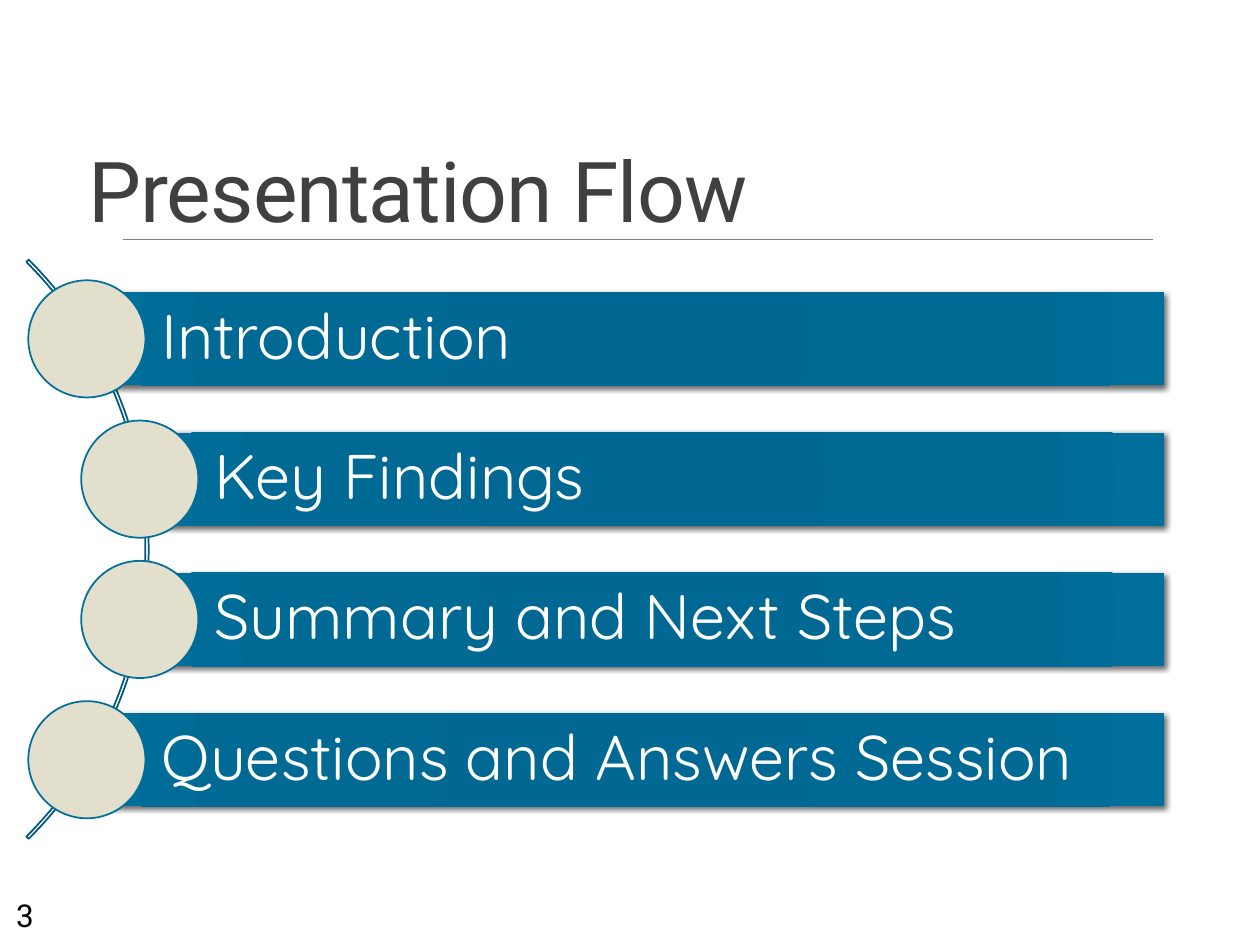
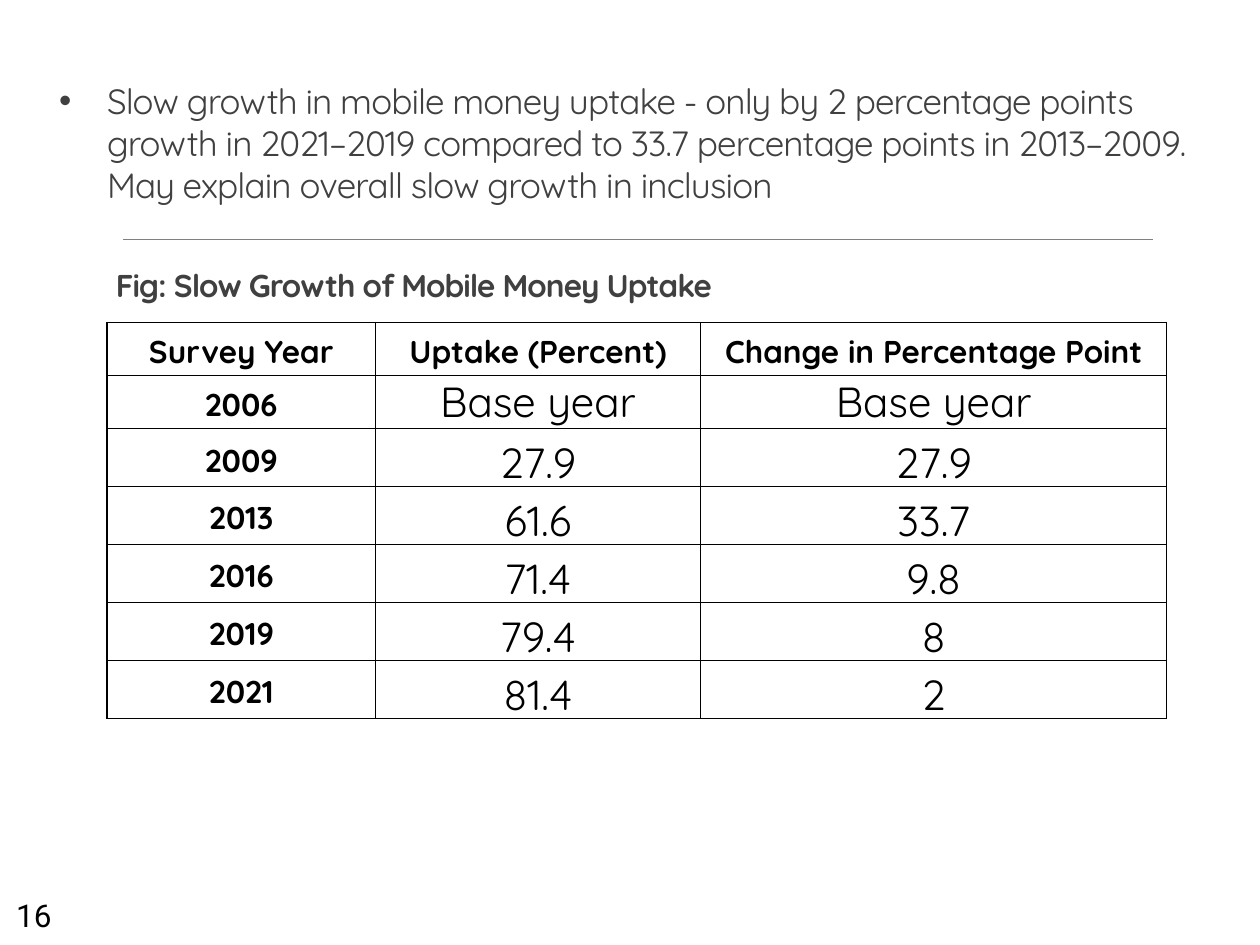
"""Build two slides: the presentation flow and the mobile money uptake table."""
import pptx
import pptx.dml.color
import pptx.enum.shapes
import pptx.enum.text
import pptx.oxml
import pptx.oxml.ns
import pptx.util
from lxml import etree

Inches = pptx.util.Inches
Pt = pptx.util.Pt
RGBColor = pptx.dml.color.RGBColor
Shape = pptx.enum.shapes.MSO_SHAPE
Align = pptx.enum.text.PP_ALIGN
Anchor = pptx.enum.text.MSO_ANCHOR
qn = pptx.oxml.ns.qn

INK = RGBColor(0x40, 0x40, 0x40)
BLACK = RGBColor(0, 0, 0)
WHITE = RGBColor(0xFF, 0xFF, 0xFF)
RULE_GRAY = RGBColor(0x80, 0x80, 0x80)
ARC_BLUE = RGBColor(0x00, 0x59, 0x7C)
RING_BLUE = RGBColor(0x00, 0x6F, 0x9B)
SAND = RGBColor(0xE2, 0xDF, 0xCC)
BAR_STOPS = ((0, "006790"), (34, "006892"), (70, "006A94"), (100, "006F9B"))
HEADING_FONT = "Roboto"
BODY_FONT = "Quicksand"
SNUG = (0.07, 0.04, 0.07, 0.04)
DRAWING_NS = 'xmlns:a="http://schemas.openxmlformats.org/drawingml/2006/main"'

FLOW_STEPS = (
    (0.69, "Introduction"),
    (1.11, "Key Findings"),
    (1.11, "Summary and Next Steps"),
    (0.69, "Questions and Answers Session"),
)
BAR_RIGHT, BAR_HEIGHT, CIRCLE_SIZE = 9.24, 0.74, 0.93
FIRST_BAR_TOP, LAST_BAR_TOP = 2.32, 5.66

UPTAKE_ROWS = (
    ("Survey Year", "Uptake (Percent)", "Change in Percentage Point"),
    ("2006", "Base year", "Base year"),
    ("2009", "27.9", "27.9"),
    ("2013", "61.6", "33.7"),
    ("2016", "71.4", "9.8"),
    ("2019", "79.4", "8"),
    ("2021", "81.4", "2"),
)
COLUMN_WIDTHS = (2.13, 2.58, 3.7)
ROW_HEIGHT = 0.42


def write_text(frame, text, *, size, font=BODY_FONT, color=INK, bold=False,
               align=Align.LEFT, line_spacing=None, tracking=None, hanging=None):
    """Write one formatted paragraph, bulleted when a hanging indent is given."""
    paragraph = frame.paragraphs[0]
    paragraph.alignment = align
    if line_spacing:
        paragraph.line_spacing = line_spacing
    if hanging:
        properties = paragraph._p.get_or_add_pPr()
        properties.set("marL", str(Inches(hanging)))
        properties.set("indent", str(-Inches(hanging)))
        etree.SubElement(properties, qn("a:buFont")).set("typeface", "Arial")
        etree.SubElement(properties, qn("a:buChar")).set("char", "•")
    run = paragraph.add_run()
    run.text = text
    run.font.name = font
    run.font.size = Pt(size)
    run.font.bold = bold
    run.font.color.rgb = color
    if tracking:
        run.font._element.set("spc", str(round(tracking * 100)))


def set_frame(frame, anchor, insets):
    """Wrap a text frame and set its anchor and insets in inches."""
    frame.word_wrap = True
    frame.vertical_anchor = anchor
    (frame.margin_left, frame.margin_top,
     frame.margin_right, frame.margin_bottom) = map(Inches, insets)


def add_text(slide, box, text, *, anchor=Anchor.TOP,
             insets=(0.1, 0.05, 0.1, 0.05), **text_format):
    """Add a text box."""
    frame = slide.shapes.add_textbox(*map(Inches, box)).text_frame
    set_frame(frame, anchor, insets)
    write_text(frame, text, **text_format)


def add_outlined(slide, preset, box, line_color, fill_color=None):
    """Add a preset shape with a thin outline and an optional fill."""
    shape = slide.shapes.add_shape(preset, *map(Inches, box))
    shape.shadow.inherit = False
    shape.line.color.rgb = line_color
    shape.line.width = Pt(1)
    if fill_color is None:
        shape.fill.background()
    else:
        shape.fill.solid()
        shape.fill.fore_color.rgb = fill_color
    return shape


def add_flow_bar(slide, box, label):
    """Add a radial gradient bar with a soft shadow and its label."""
    bar = slide.shapes.add_shape(Shape.RECTANGLE, *map(Inches, box))
    bar.line.fill.background()
    stops = "".join(f'<a:gs pos="{position * 1000}"><a:srgbClr val="{color}"/></a:gs>'
                    for position, color in BAR_STOPS)
    gradient = pptx.oxml.parse_xml(
        f'<a:gradFill {DRAWING_NS} rotWithShape="1"><a:gsLst>{stops}</a:gsLst>'
        '<a:path path="circle"><a:fillToRect l="100000" t="100000" r="100000" '
        'b="100000"/></a:path></a:gradFill>')
    shadow = pptx.oxml.parse_xml(
        f'<a:effectLst {DRAWING_NS}><a:outerShdw blurRad="{Pt(3)}" dist="{Pt(2)}" '
        'dir="2700000" rotWithShape="0"><a:srgbClr val="000000">'
        '<a:alpha val="60000"/></a:srgbClr></a:outerShdw></a:effectLst>')
    properties = bar._element.spPr
    properties.find(qn("a:prstGeom")).addnext(gradient)
    properties.append(shadow)
    set_frame(bar.text_frame, Anchor.MIDDLE, (0.59, 0.1, 0.1, 0.1))
    write_text(bar.text_frame, label, size=36, color=WHITE, line_spacing=0.9)


def add_flow(slide):
    """Add the arc and the evenly spaced steps along it."""
    arc = add_outlined(slide, Shape.BLOCK_ARC, (-5.32, 1.11, 6.5, 6.5), ARC_BLUE)
    for index, value in enumerate((189, 27, 0.004)):
        arc.adjustments[index] = value
    pitch = (LAST_BAR_TOP - FIRST_BAR_TOP) / (len(FLOW_STEPS) - 1)
    for index, (left, label) in enumerate(FLOW_STEPS):
        top = FIRST_BAR_TOP + index * pitch
        add_flow_bar(slide, (left, top, BAR_RIGHT - left, BAR_HEIGHT), label)
        circle_box = (left - CIRCLE_SIZE / 2, top + (BAR_HEIGHT - CIRCLE_SIZE) / 2,
                      CIRCLE_SIZE, CIRCLE_SIZE)
        add_outlined(slide, Shape.OVAL, circle_box, RING_BLUE, SAND)


def add_borders(cell):
    """Draw a black line on each side of a table cell."""
    properties = cell._tc.get_or_add_tcPr()
    for side in ("lnL", "lnR", "lnT", "lnB"):
        properties.append(pptx.oxml.parse_xml(
            f'<a:{side} {DRAWING_NS} w="{Pt(1)}"><a:solidFill>'
            f'<a:srgbClr val="{BLACK}"/></a:solidFill></a:{side}>'))


def add_uptake_table(slide):
    """Add the table of uptake by survey year."""
    box = (0.85, 2.56, sum(COLUMN_WIDTHS), ROW_HEIGHT * len(UPTAKE_ROWS))
    table = slide.shapes.add_table(
        len(UPTAKE_ROWS), len(COLUMN_WIDTHS), *map(Inches, box)).table
    table.first_row = table.horz_banding = False
    for column, width in zip(table.columns, COLUMN_WIDTHS):
        column.width = Inches(width)
    for row_index, values in enumerate(UPTAKE_ROWS):
        table.rows[row_index].height = Inches(ROW_HEIGHT)
        for column_index, value in enumerate(values):
            cell = table.cell(row_index, column_index)
            add_borders(cell)
            cell.fill.solid()
            cell.fill.fore_color.rgb = WHITE
            cell.vertical_anchor = Anchor.MIDDLE
            cell.margin_left = cell.margin_right = Inches(0.07)
            cell.margin_top = cell.margin_bottom = 0
            is_heading = row_index == 0 or column_index == 0
            write_text(cell.text_frame, value, size=18 if is_heading else 24,
                       color=BLACK, bold=is_heading, align=Align.CENTER,
                       line_spacing=1 if value == "Base year" else 1.15)


def add_base_slide(deck, number):
    """Add a blank slide with the shared rule and slide number."""
    slide = deck.slides.add_slide(deck.slide_layouts[6])
    rule = slide.shapes.add_connector(
        pptx.enum.shapes.MSO_CONNECTOR.STRAIGHT,
        Inches(0.98), Inches(1.9), Inches(9.15), Inches(1.9))
    rule.line.color.rgb = RULE_GRAY
    rule.line.width = Pt(0.5)
    etree.SubElement(rule._element.spPr, qn("a:effectLst"))
    add_text(slide, (0.03, 7.06, 0.64, 0.4), str(number),
             size=18, font=HEADING_FONT, color=BLACK)
    return slide


def main():
    """Build and save the deck."""
    deck = pptx.Presentation()
    deck.slide_width, deck.slide_height = Inches(10), Inches(7.5)

    flow = add_base_slide(deck, 3)
    add_text(flow, (0.6, 0.36, 8.25, 1.59), "Presentation Flow", size=48,
             font=HEADING_FONT, anchor=Anchor.BOTTOM, line_spacing=0.85, tracking=-0.5)
    add_flow(flow)

    uptake = add_base_slide(deck, 16)
    add_text(uptake, (0.85, 2.07, 7.46, 0.39), "Fig: Slow Growth of Mobile Money Uptake",
             size=18, bold=True, insets=SNUG, tracking=-0.5)
    add_text(uptake, (0.4, 0.59, 9.09, 1.48),
             "Slow growth in mobile money uptake - only by 2 percentage points growth in "
             "2021–2019 compared to 33.7 percentage points in 2013–2009. "
             "May explain overall slow growth in inclusion",
             size=20, insets=SNUG, tracking=-0.5, hanging=0.38)
    add_uptake_table(uptake)

    deck.save("out.pptx")


if __name__ == "__main__":
    main()
